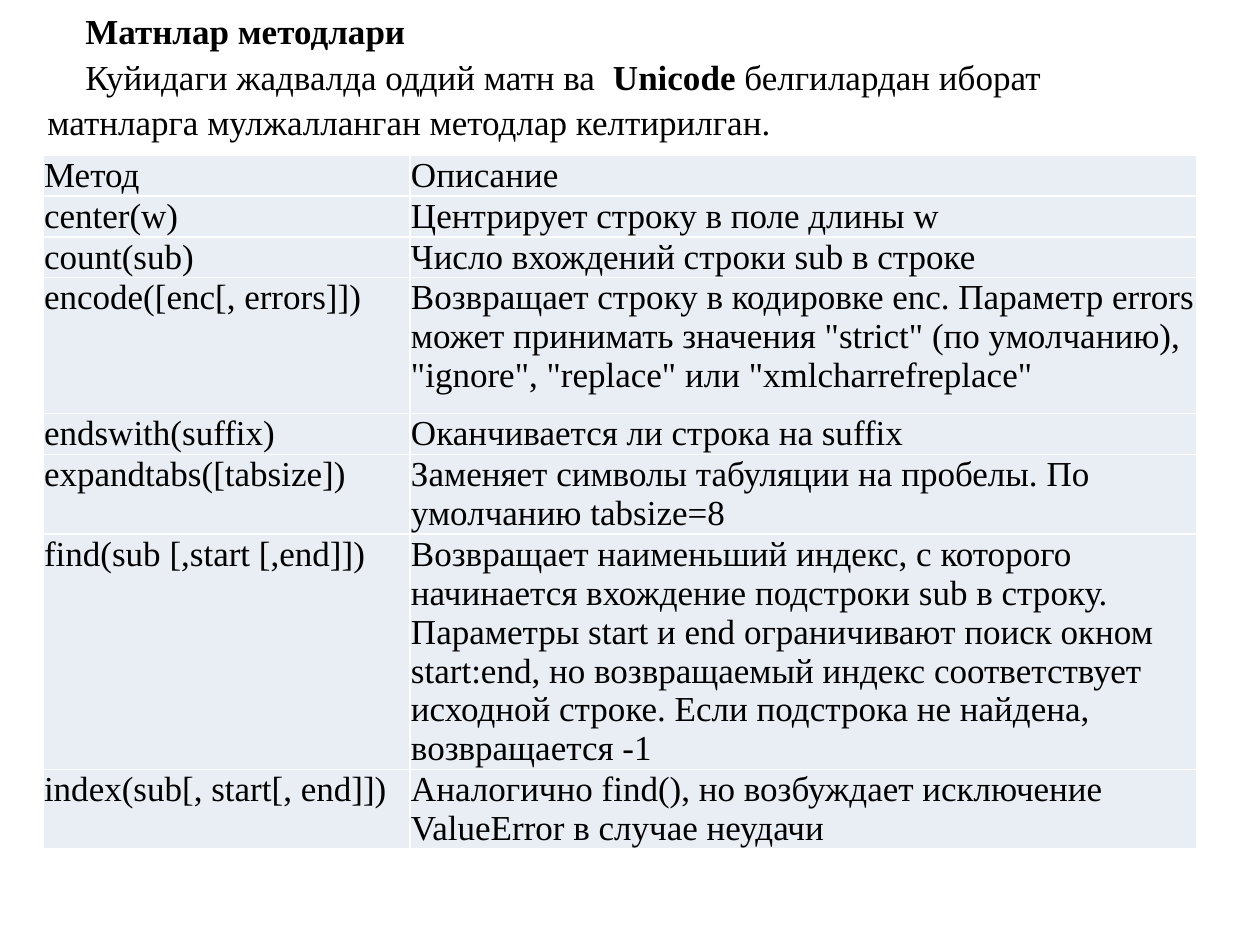
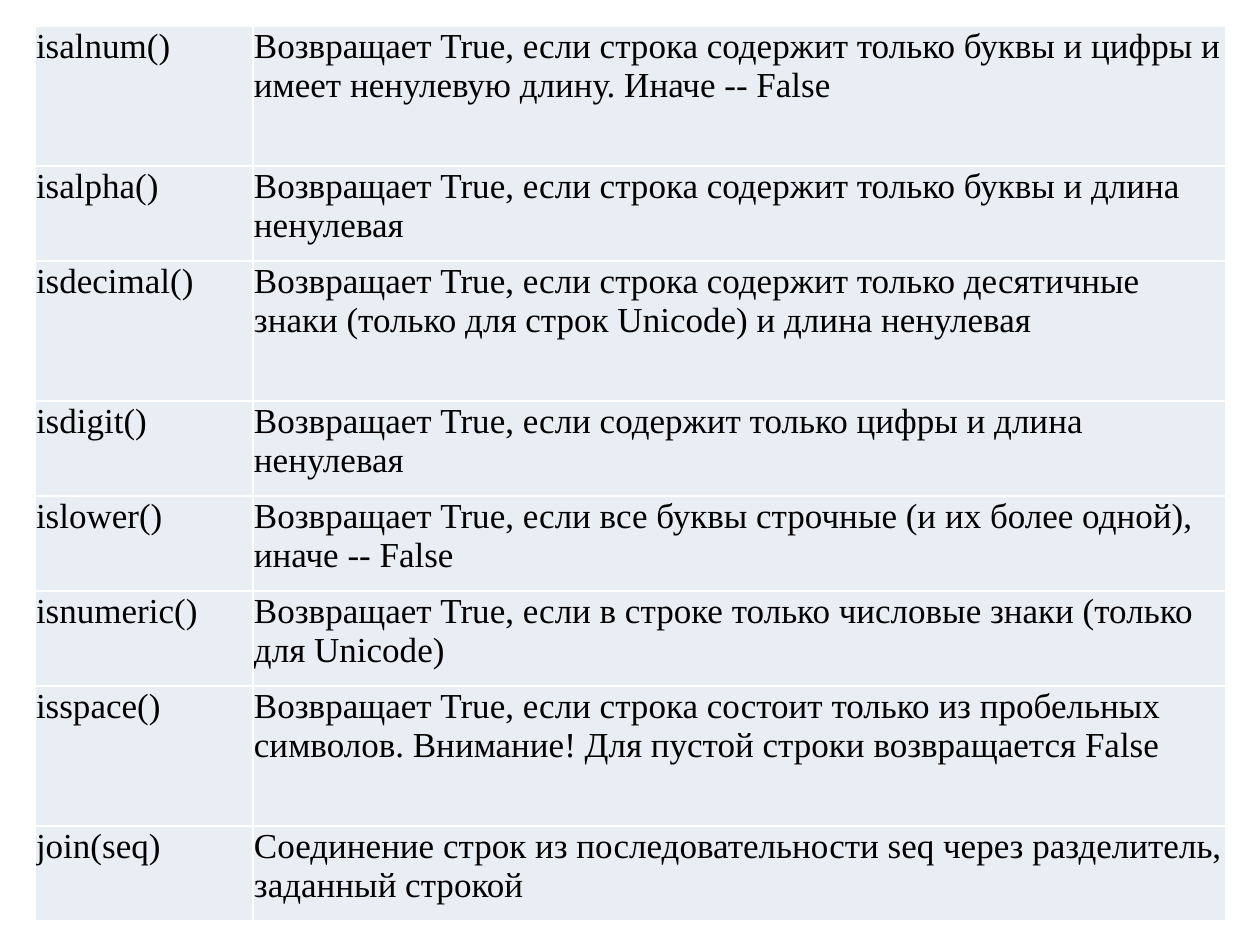
import pptx
import pptx.dml.color
import pptx.enum.text
import pptx.oxml
import pptx.oxml.ns
import pptx.util

PX_PER_INCH = 126
ANCHOR = pptx.enum.text.MSO_ANCHOR

STRING_METHODS = [
    ("Метод", "Описание"),
    ("center(w)", "Центрирует строку в поле длины w"),
    ("count(sub)", "Число вхождений строки sub в строке"),
    ("encode([enc[, errors]])",
     "Возвращает строку в кодировке enc. Параметр errors может принимать значения "
     '"strict" (по умолчанию), "ignore", "replace" или "xmlcharrefreplace"'),
    ("endswith(suffix)", "Оканчивается ли строка на suffix"),
    ("expandtabs([tabsize])",
     "Заменяет символы табуляции на пробелы. По умолчанию tabsize=8"),
    ("find(sub [,start [,end]])",
     "Возвращает наименьший индекс, с которого начинается вхождение подстроки sub "
     "в строку. Параметры start и end ограничивают поиск окном start:end, но "
     "возвращаемый индекс соответствует исходной строке. Если подстрока не найдена, "
     "возвращается -1"),
    ("index(sub[, start[, end]])",
     "Аналогично find(), но возбуждает исключение ValueError в случае неудачи"),
]

CHECK_METHODS = [
    ("isalnum()", "Возвращает True, если строка содержит только буквы и цифры и имеет "
                  "ненулевую длину. Иначе -- False"),
    ("isalpha()", "Возвращает True, если строка содержит только буквы и длина ненулевая"),
    ("isdecimal()", "Возвращает True, если строка содержит только десятичные знаки "
                    "(только для строк Unicode) и длина ненулевая"),
    ("isdigit()", "Возвращает True, если содержит только цифры и длина ненулевая"),
    ("islower()", "Возвращает True, если все буквы строчные (и их более одной), "
                  "иначе -- False"),
    ("isnumeric()", "Возвращает True, если в строке только числовые знаки "
                    "(только для Unicode)"),
    ("isspace()", "Возвращает True, если строка состоит только из пробельных символов. "
                  "Внимание! Для пустой строки возвращается False"),
    ("join(seq)", "Соединение строк из последовательности seq через разделитель, "
                  "заданный строкой"),
]


def px(n):
    return pptx.util.Emu(round(n * 914400 / PX_PER_INCH))


def rgb(color):
    return pptx.dml.color.RGBColor.from_string(color)


class Deck:
    """Holds the shared style and the current slide."""

    font_name, font_size = "Times New Roman", 20
    ink, cell_fill, border = "000000", "E9EDF4", "FFFFFF"

    def __init__(self, w, h):
        self.prs = pptx.Presentation()
        self.prs.slide_width, self.prs.slide_height = px(w), px(h)

    def slide(self):
        self.s = self.prs.slides.add_slide(self.prs.slide_layouts[6])

    def style(self, p):
        p.font.name = self.font_name
        p.font.size = pptx.util.Pt(self.font_size)
        p.font.color.rgb = rgb(self.ink)

    def text(self, x, y, w, h, paragraphs, indent, bottom):
        """Each paragraph is a list of (text, bold) runs."""
        tf = self.s.shapes.add_textbox(px(x), px(y), px(w), px(h)).text_frame
        tf.word_wrap = True
        tf.vertical_anchor = ANCHOR.MIDDLE
        tf.margin_bottom = px(bottom)
        for i, runs in enumerate(paragraphs):
            p = tf.add_paragraph() if i else tf.paragraphs[0]
            p.line_spacing = 1.08
            p._p.get_or_add_pPr().set("indent", str(px(indent)))
            self.style(p)
            for text, bold in runs:
                r = p.add_run()
                r.text, r.font.bold = text, bold

    def borders(self, cell):
        tc_pr = cell._tc.get_or_add_tcPr()
        for i, side in enumerate("LRTB"):
            tc_pr.insert(i, pptx.oxml.parse_xml(
                f'<a:ln{side} {pptx.oxml.ns.nsdecls("a")} w="12700"><a:solidFill>'
                f'<a:srgbClr val="{self.border}"/></a:solidFill></a:ln{side}>'))

    def cell(self, cell, text, anchor):
        cell.margin_left = cell.margin_right = px(1)
        cell.margin_top = cell.margin_bottom = px(1)
        cell.vertical_anchor = anchor
        cell.text = text
        self.style(cell.text_frame.paragraphs[0])
        cell.fill.solid()
        cell.fill.fore_color.rgb = rgb(self.cell_fill)
        self.borders(cell)

    def table(self, x, y, widths, heights, rows, header=False):
        table = self.s.shapes.add_table(
            len(rows), len(widths), px(x), px(y),
            px(sum(widths)), px(sum(heights))).table
        table.first_row = table.horz_banding = False
        for column, w in zip(table.columns, widths):
            column.width = px(w)
        for i, (row, h, texts) in enumerate(zip(table.rows, heights, rows)):
            row.height = px(h)
            anchor = ANCHOR.MIDDLE if header and i == 0 else ANCHOR.TOP
            for cell, text in zip(row.cells, texts):
                self.cell(cell, text, anchor)


def main():
    deck = Deck(1260, 945)

    deck.slide()
    deck.table(43, 155, [367, 787], [37, 37, 37, 136, 37, 69, 202, 69],
               STRING_METHODS, header=True)
    deck.text(35, 4, 1171, 183, [
        [("Матнлар методлари", True)],
        [("Куйидаги жадвалда оддий матн ва  ", False), ("Unicode ", True),
         ("белгилардан иборат матнларга мулжалланган методлар келтирилган.", False)],
    ], indent=38, bottom=48)

    deck.slide()
    tall, short = 140, 95
    deck.table(35, 26, [218, 973],
               [tall, short, tall, short, short, short, tall, short], CHECK_METHODS)

    deck.prs.save("out.pptx")


if __name__ == "__main__":
    main()
